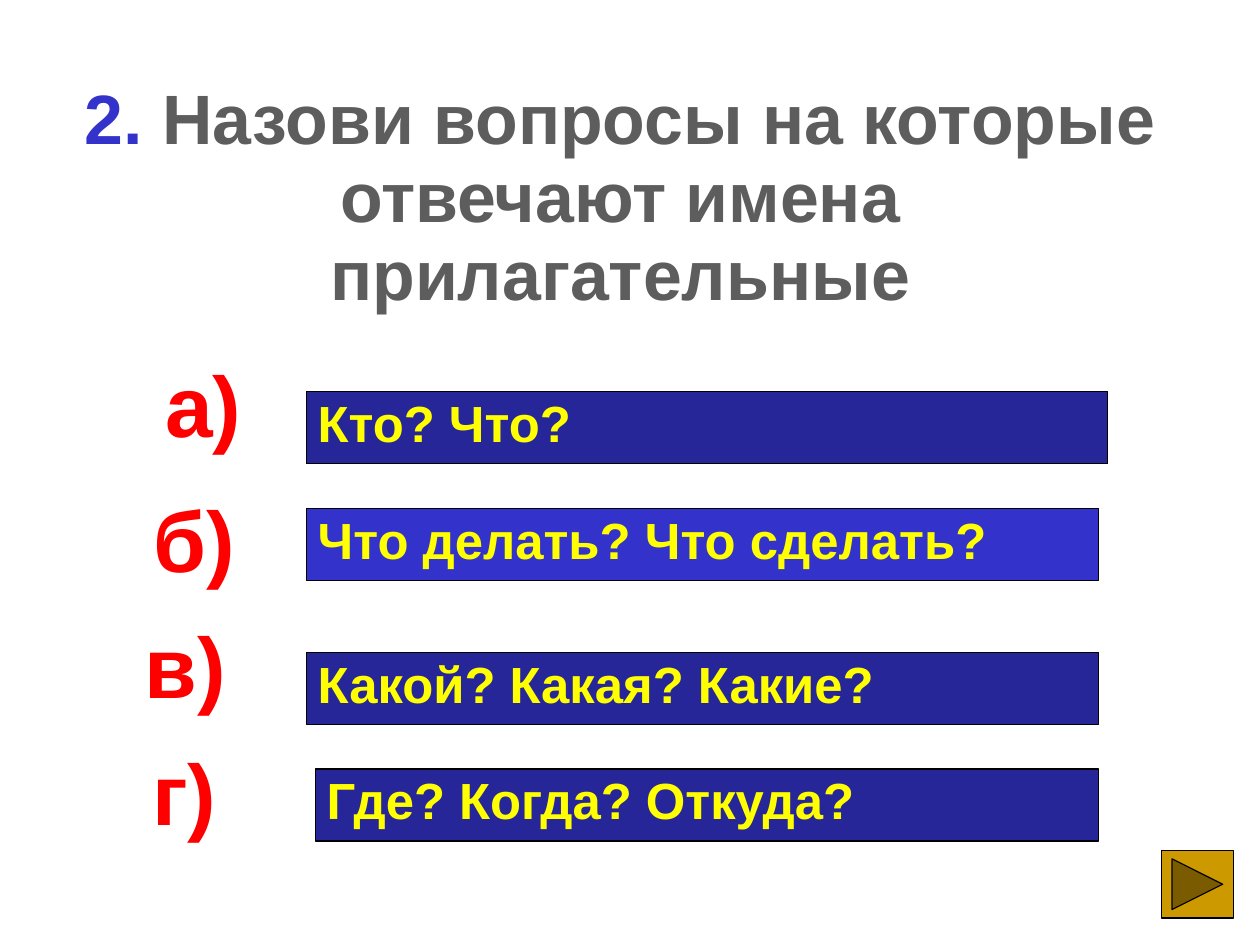
"""Build a quiz slide about the questions that adjectives answer."""
from pptx import Presentation
from pptx import util as u
from pptx.dml.color import RGBColor
from pptx.enum import shapes, text

TITLE = [("2. ", "3333CC"),
         ("Назови вопросы на которые отвечают имена прилагательные", "5D5D5D")]
ANSWERS = [
    ("а)", (3.4, 7.9, 2.24), "Кто? Что?", (6.81, 8.71, 17.81), "262699"),
    ("б)", (3.15, 10.9, 2.34), "Что делать? Что сделать?", (6.81, 11.3, 17.6), "3333CC"),
    ("в)", (2.95, 13.69, 2.34), "Какой? Какая? Какие?", (6.81, 14.5, 17.6), "262699"),
    ("г)", (3.12, 16.51, 1.96), "Где? Когда? Откуда?", (7.01, 17.09, 17.4), "262699"),
]
MARK_H, BAR_H = 2.41, 1.6
NEXT = (25.81, 18.9, 1.6, 1.5)


def paint(part, color):
    part.rgb = RGBColor.from_string(color)


def write(shape, runs, size, align, wrap=True):
    frame = shape.text_frame
    frame.word_wrap = wrap
    frame.vertical_anchor = text.MSO_ANCHOR.TOP
    para = frame.paragraphs[0]
    para.alignment = align
    para.line_spacing = 0.93
    para.font.name, para.font.size, para.font.bold = "Arial", u.Pt(size), True
    if len(runs) == 1:
        paint(para.font.color, runs[0][1])
    for words, color in runs:
        run = para.add_run()
        run.text = words
        if len(runs) > 1:
            paint(run.font.color, color)


def add_box(slide, *place):
    return slide.shapes.add_textbox(*map(u.Cm, place))


def add_block(slide, kind, place, fill):
    block = slide.shapes.add_shape(kind, *map(u.Cm, place))
    block.shadow.inherit = False
    block.fill.solid()
    paint(block.fill.fore_color, fill)
    block.line.fill.solid()
    paint(block.line.color, "000000")
    block.line.width = u.Pt(0.75)
    return block


def main():
    deck = Presentation()
    deck.slide_width, deck.slide_height = u.Cm(28), u.Cm(21)
    slide = deck.slides.add_slide(deck.slide_layouts[6])
    left, center = text.PP_ALIGN.LEFT, text.PP_ALIGN.CENTER
    kinds = shapes.MSO_SHAPE

    write(add_box(slide, 1.19, 1.7, 25.2, 5.51), TITLE, 44, center)
    for mark, spot, words, place, fill in ANSWERS:
        write(add_box(slide, *spot, MARK_H), [(mark, "FF0000")], 54, center, False)
        bar = add_block(slide, kinds.RECTANGLE, (*place, BAR_H), fill)
        write(bar, [(words, "FFFF00")], 32, left)
    add_block(slide, kinds.ACTION_BUTTON_FORWARD_OR_NEXT, NEXT, "CC9900")
    deck.save("out.pptx")


if __name__ == "__main__":
    main()
